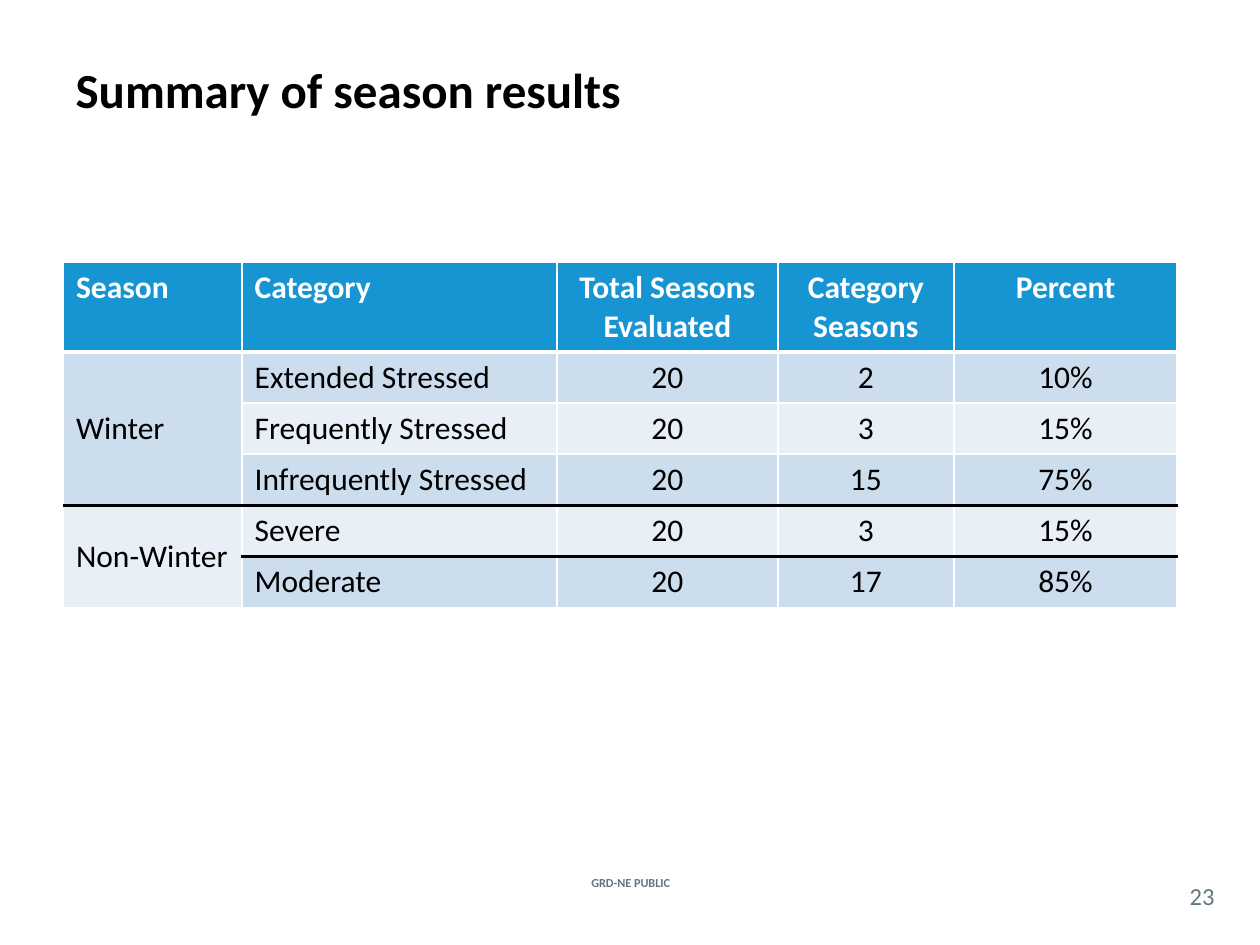
from lxml.etree import SubElement
from pptx import Presentation
from pptx.dml.color import RGBColor
from pptx.enum.text import MSO_ANCHOR as Anchor, PP_ALIGN as Align
from pptx.oxml.ns import qn
from pptx.util import Cm, Pt

WHITE = RGBColor(0xFF, 0xFF, 0xFF)
BLACK = RGBColor(0x00, 0x00, 0x00)
SLATE = RGBColor(0x62, 0x77, 0x7F)
BLUE = RGBColor(0x17, 0x95, 0xD2)
BANDS = (RGBColor(0xE8, 0xEF, 0xF7), RGBColor(0xCC, 0xDD, 0xEE))

RESULTS = [
    ("Season", "Category", "Total Seasons Evaluated", "Category Seasons", "Percent"),
    ("Winter", "Extended Stressed", "20", "2", "10%"),
    ("", "Frequently Stressed", "20", "3", "15%"),
    ("", "Infrequently Stressed", "20", "15", "75%"),
    ("Non-Winter", "Severe", "20", "3", "15%"),
    ("", "Moderate", "20", "17", "85%"),
]
COLUMN_WIDTHS = (3.6, 6.35, 4.45, 3.55, 4.5)
HEADER_HEIGHT, ROW_HEIGHT = 1.79, 1.03
SEASON_SPANS = ((1, 3), (4, 5))  # first and last row of each season
THIN = (WHITE, 1)
RULES_BELOW = {0: (WHITE, 3), 3: (BLACK, 2.25), 4: (BLACK, 2.25)}


def rule_below(row, column):
    """Line under a row; none crosses a merged season cell."""
    inside_season = any(first <= row < last for first, last in SEASON_SPANS)
    if column == 0 and inside_season:
        return THIN
    return RULES_BELOW.get(row, THIN)


class SlideBuilder:
    font = "Calibri"

    def __init__(self, slide):
        self.slide = slide

    def set_text(self, holder, text, size, color, bold=False, align=Align.LEFT):
        holder.text_frame.text = text
        paragraph = holder.text_frame.paragraphs[0]
        paragraph.alignment = align
        for run in paragraph.runs:
            run.font.name, run.font.size = self.font, Pt(size)
            run.font.bold, run.font.color.rgb = bold, color

    def title(self, text, left, top, width, height):
        heading = self.slide.shapes.title
        heading.left, heading.top = Cm(left), Cm(top)
        heading.width, heading.height = Cm(width), Cm(height)
        heading.text_frame.vertical_anchor = Anchor.MIDDLE
        self.set_text(heading, text, 28, BLACK, bold=True)

    def label(self, text, left, top, width, height, size, bold=False):
        box = self.slide.shapes.add_textbox(Cm(left), Cm(top), Cm(width), Cm(height))
        frame = box.text_frame
        frame.word_wrap = True
        frame.vertical_anchor = Anchor.MIDDLE
        frame.margin_left = frame.margin_right = 0
        frame.margin_top = frame.margin_bottom = 0
        self.set_text(box, text, size, SLATE, bold, Align.CENTER)

    def borders(self, cell, top, bottom):
        properties = cell._tc.get_or_add_tcPr()
        for side, (color, width) in zip("LRTB", (THIN, THIN, top, bottom)):
            line = SubElement(properties, qn(f"a:ln{side}"), w=str(Pt(width)))
            fill = SubElement(line, qn("a:solidFill"))
            SubElement(fill, qn("a:srgbClr"), val=str(color))

    def table(self, rows, left, top):
        height = HEADER_HEIGHT + ROW_HEIGHT * (len(rows) - 1)
        table = self.slide.shapes.add_table(
            len(rows), len(COLUMN_WIDTHS), Cm(left), Cm(top),
            Cm(sum(COLUMN_WIDTHS)), Cm(height)).table
        for column, width in zip(table.columns, COLUMN_WIDTHS):
            column.width = Cm(width)
        for first, last in SEASON_SPANS:
            table.cell(first, 0).merge(table.cell(last, 0))

        for r, values in enumerate(rows):
            header = r == 0
            table.rows[r].height = Cm(HEADER_HEIGHT if header else ROW_HEIGHT)
            for c, value in enumerate(values):
                cell = table.cell(r, c)
                last_row = r + cell.span_height - 1 if cell.is_merge_origin else r
                self.borders(cell, rule_below(r - 1, c), rule_below(last_row, c))
                cell.fill.solid()
                cell.fill.fore_color.rgb = BLUE if header else BANDS[r % 2]
                merged = c == 0 and not header
                cell.vertical_anchor = Anchor.MIDDLE if merged else Anchor.TOP
                self.set_text(cell, value, 18, WHITE if header else BLACK, header,
                              Align.CENTER if c > 1 else Align.LEFT)


def main():
    deck = Presentation()
    deck.slide_width, deck.slide_height = Cm(25.4), Cm(19.05)
    builder = SlideBuilder(deck.slides.add_slide(deck.slide_layouts[5]))

    # Heading
    builder.title("Summary of season results", 1.27, 0.2, 22.86, 3.18)

    # Season results
    builder.table(RESULTS, 1.28, 5.29)

    # Footer
    builder.label("GRD-NE PUBLIC", 10.85, 17.58, 3.73, 0.43, 7, bold=True)
    builder.label("23", 23.7, 17.68, 1.07, 0.74, 14)

    deck.save("out.pptx")


if __name__ == "__main__":
    main()
